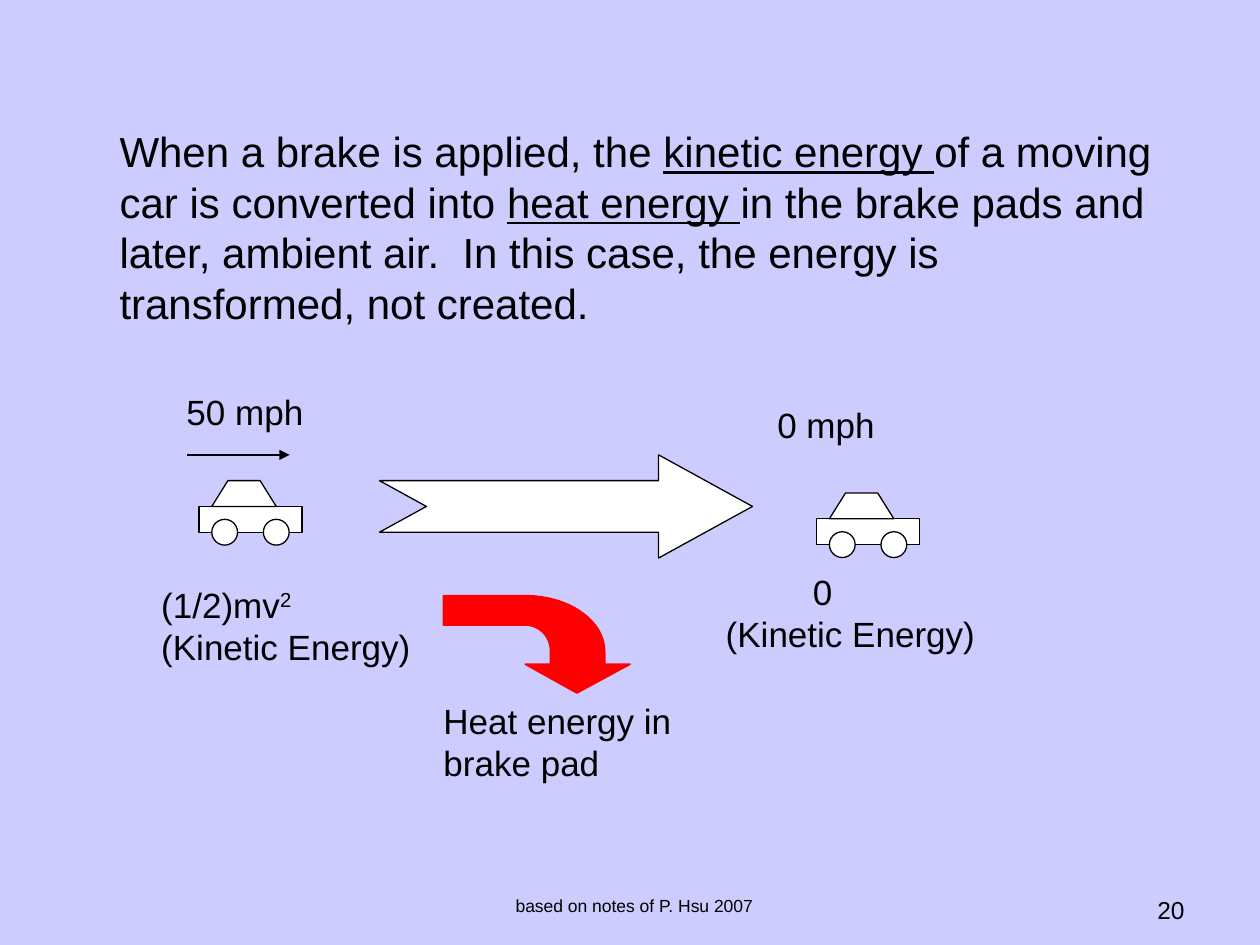
import pptx
import pptx.util
import pptx.dml.color
import pptx.oxml
import pptx.oxml.ns
from pptx.enum.shapes import MSO_CONNECTOR, MSO_SHAPE
from pptx.enum.text import PP_ALIGN

Cm, Pt = pptx.util.Cm, pptx.util.Pt
FONT, BLACK, WHITE, RED, BACK = "Arial", "000000", "FFFFFF", "FF0000", "CCCCFF"

# Lengths are centimetres. A run is (text, style); style "u" underlines, "sup" raises.
# Each text: box, size, alignment, inset, paragraphs as (indent, runs)
LEFT, MID, RIGHT = PP_ALIGN.LEFT, PP_ALIGN.CENTER, PP_ALIGN.RIGHT
PAD, NONE = (0.25, 0.13), (0, 0)
KINETIC = (0, [("(Kinetic Energy)", "")])
TEXTS = [
    ((8.76, 17.91, 8.05, 0.94), 10, MID, PAD,
     [(0, [("based on notes of P. Hsu 2007", "")])]),
    ((2.16, 2.41, 21.84, 4.45), 24, LEFT, PAD, [(0, [
        ("When a brake is applied, the ", ""),
        ("kinetic energy ", "u"),
        ("of a moving car is converted into ", ""),
        ("heat energy ", "u"),
        ("in the brake pads and later, ambient air.  In this case, "
         "the energy is transformed, not created.", "")])]),
    ((18.21, 17.91, 5.92, 0.76), 14, RIGHT, PAD, [(0, [("20", "")])]),
    ((3.76, 7.87, 3.38, 1.04), 20, LEFT, NONE, [(0, [("50 mph", "")])]),
    ((15.67, 8.13, 3.38, 1.04), 20, LEFT, NONE, [(0, [("0 mph", "")])]),
    ((8.94, 14.1, 5.97, 2.34), 20, LEFT, NONE,
     [(0, [("Heat energy in brake pad", "")])]),
    ((3.25, 11.76, 6.22, 2.34), 20, LEFT, NONE,
     [(0, [("(1/2)mv", ""), ("2", "sup")]), KINETIC]),
    ((14.63, 11.51, 6.22, 2.34), 20, LEFT, NONE,
     [(1.76, [("0", "")]), KINETIC]),
]
CARS = [(4.01, 10.21), (16.46, 10.46)]
UNIT = 0.26  # a car is 8 units long
SPEED = (3.76, 9.17, 5.84, 9.17)
CHANGE = (7.65, 9.17, 7.52, 2.08)

# Heat arrow: tip, outer bend, tail, inner bend, back to the head
OUTER = [(12.19, 13.13), (12.19, 12.52), (11.48, 12.01), (10.59, 12.01)]
INNER = [(10.59, 12.6), (10.87, 12.6), (11.1, 12.83), (11.1, 13.13)]


def color(text):
    return pptx.dml.color.RGBColor.from_string(text)


def paint(shape, fill=WHITE, line=BLACK, width=0.75):
    shape.shadow.inherit = False
    shape.fill.solid()
    shape.fill.fore_color.rgb = color(fill)
    shape.line.color.rgb = color(line)
    shape.line.width = Pt(width)


def preset(slide, kind, *box):
    shape = slide.shapes.add_shape(kind, *map(Cm, box))
    paint(shape)
    return shape


def outline(slide, points, **look):
    points = [(Cm(x), Cm(y)) for x, y in points]
    pen = slide.shapes.build_freeform(*points[0])
    pen.add_line_segments(points[1:], close=True)
    paint(pen.convert_to_shape(), **look)


def bend(curve, steps=16):
    """Return points along a cubic Bezier curve."""
    points = []
    for i in range(steps + 1):
        t = i / steps
        parts = ((1 - t) ** 3, 3 * t * (1 - t) ** 2, 3 * t * t * (1 - t), t ** 3)
        points.append(tuple(sum(p * c[axis] for p, c in zip(parts, curve))
                            for axis in (0, 1)))
    return points


def write(slide, box, size, align, inset, paras):
    frame = slide.shapes.add_textbox(*map(Cm, box)).text_frame
    frame.word_wrap = True
    frame.margin_left = frame.margin_right = Cm(inset[0])
    frame.margin_top = frame.margin_bottom = Cm(inset[1])
    for i, (indent, runs) in enumerate(paras):
        para = frame.add_paragraph() if i else frame.paragraphs[0]
        para.alignment = align
        para.font.name, para.font.size = FONT, Pt(size)
        para.font.color.rgb = color(BLACK)
        if indent:
            para._p.get_or_add_pPr().set("marL", str(Cm(indent)))
        for text, style in runs:
            run = para.add_run()
            run.text = text
            if style == "u":
                run.font.underline = True
            elif style == "sup":
                run._r.get_or_add_rPr().set("baseline", "30000")


def car(slide, x, y):
    """Draw a car whose body has its top left corner at x, y."""
    u = UNIT
    preset(slide, MSO_SHAPE.RECTANGLE, x, y, 8 * u, 2 * u)
    for step in (1, 5):
        preset(slide, MSO_SHAPE.OVAL, x + step * u, y + u, 2 * u, 2 * u)
    cabin = [(1, 0), (2.25, -2), (4.75, -2), (6, 0)]
    outline(slide, [(x + a * u, y + b * u) for a, b in cabin])


def arrow(slide, ends):
    line = slide.shapes.add_connector(MSO_CONNECTOR.STRAIGHT, *map(Cm, ends))
    line.line.color.rgb = color(BLACK)
    line.line.width = Pt(0.75)
    tail = pptx.oxml.ns.qn("a:tailEnd")
    line.line._get_or_add_ln().makeelement(tail)
    ln = line.line._get_or_add_ln()
    ln.append(ln.makeelement(tail, {"type": "triangle"}))
    props = line._element.spPr
    props.append(props.makeelement(pptx.oxml.ns.qn("a:effectLst")))


def main():
    deck = pptx.Presentation()
    deck.slide_width, deck.slide_height = Cm(25.4), Cm(19.05)
    slide = deck.slides.add_slide(deck.slide_layouts[6])
    slide.background.fill.solid()
    slide.background.fill.fore_color.rgb = color(BACK)

    for place in CARS:
        car(slide, *place)
    arrow(slide, SPEED)
    change = preset(slide, MSO_SHAPE.NOTCHED_RIGHT_ARROW, *CHANGE)
    change.adjustments[0], change.adjustments[1] = 0.5, 0.91
    heat = [(11.63, 13.97), (12.7, 13.39), (12.19, 13.39), *bend(OUTER),
            (8.94, 12.01), (8.94, 12.6), *bend(INNER),
            (11.1, 13.39), (10.59, 13.39)]
    outline(slide, heat, fill=RED, line=RED, width=1)
    for item in TEXTS:
        write(slide, *item)
    deck.save("out.pptx")


if __name__ == "__main__":
    main()
